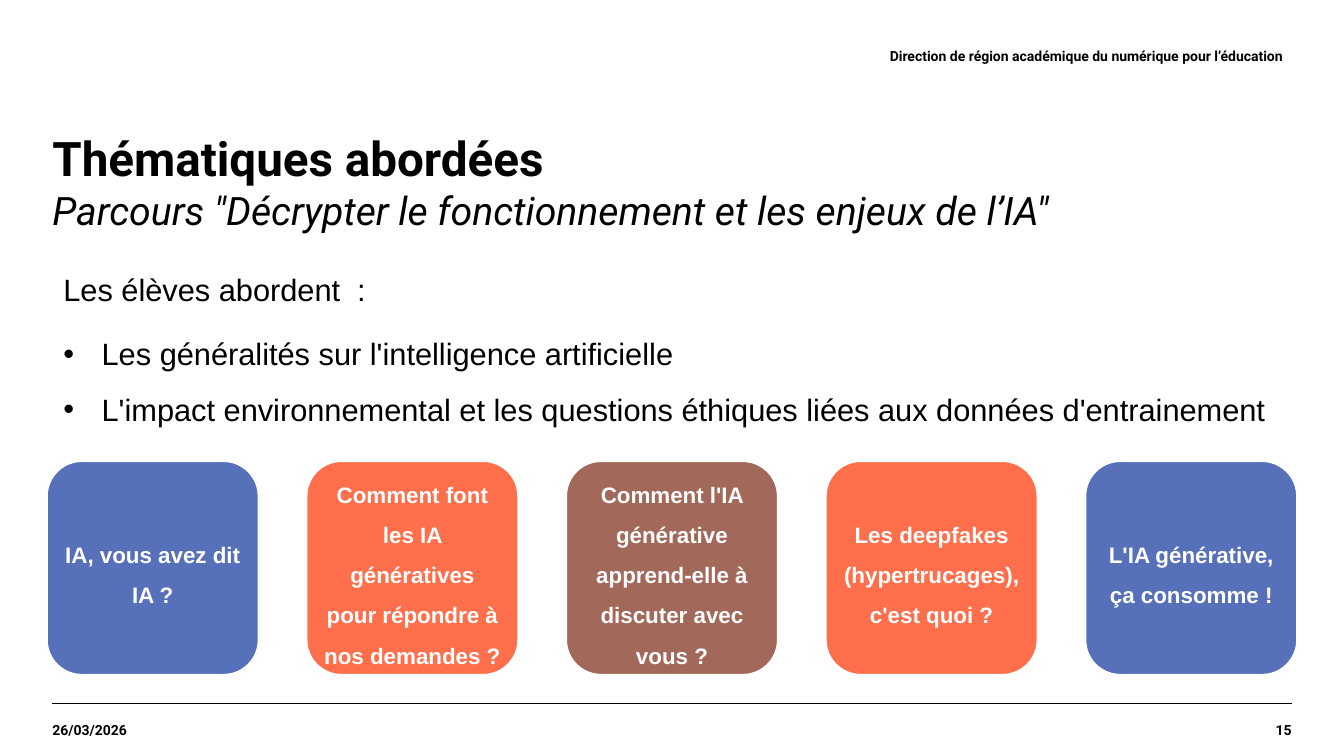
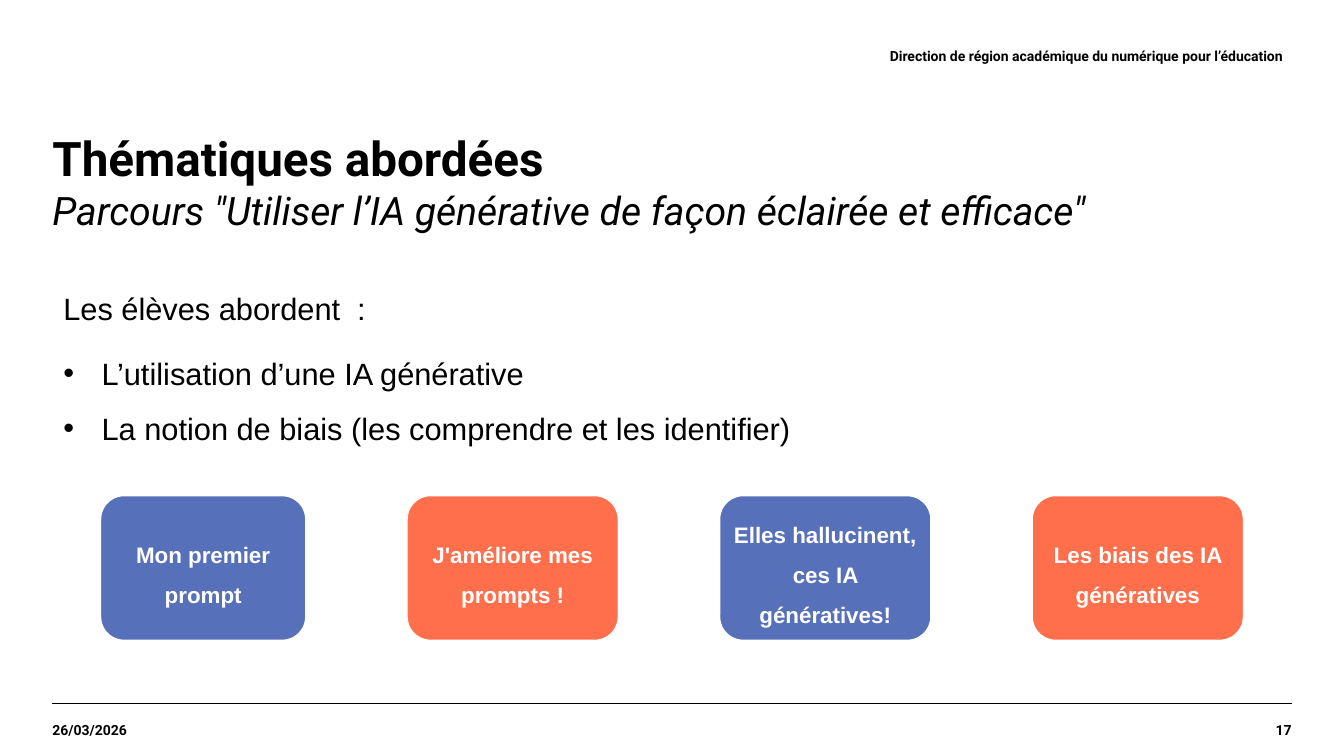
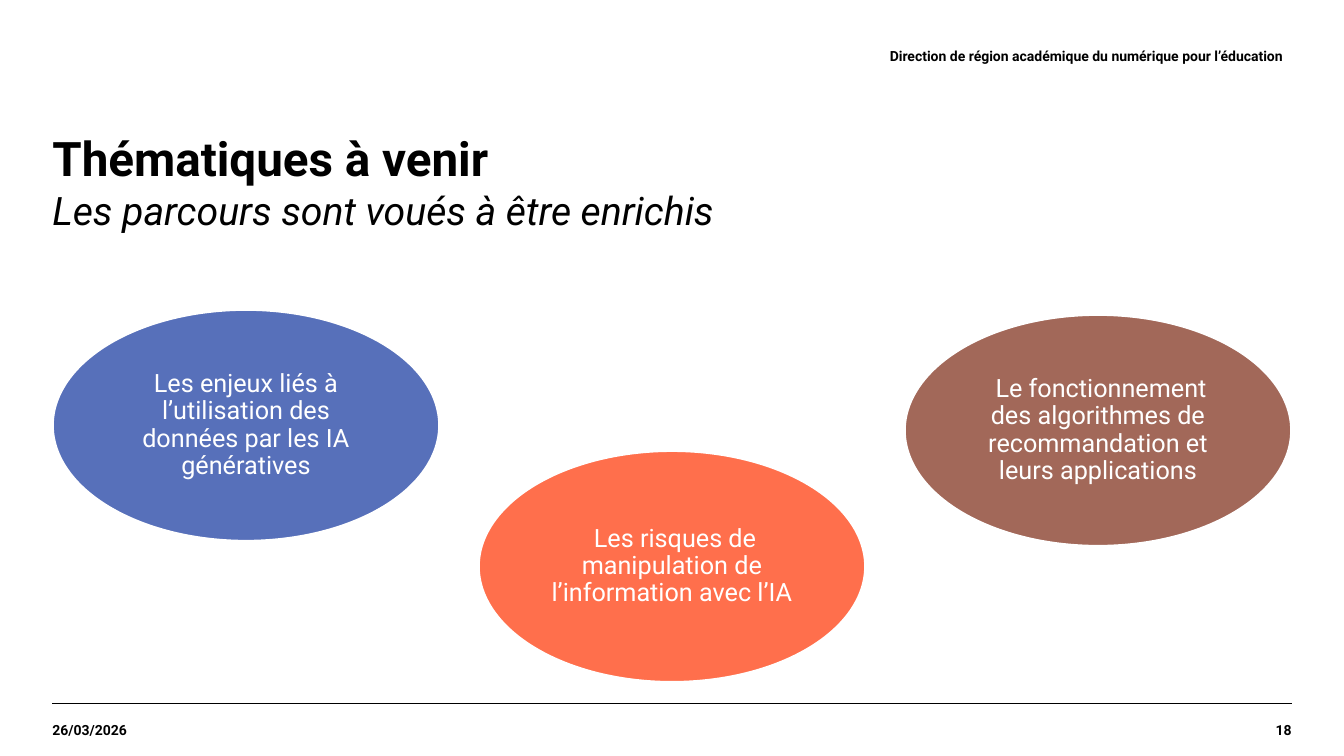
from pptx import Presentation
from pptx.dml.color import RGBColor
from pptx.enum.shapes import MSO_CONNECTOR, MSO_SHAPE
from pptx.enum.text import MSO_ANCHOR, PP_ALIGN
from pptx.oxml.ns import qn
from pptx.util import Inches, Pt
from lxml.etree import SubElement

BLACK, WHITE = "000000", "FFFFFF"
BLUE, CORAL, BROWN = "5770BA", "FF6F4C", "A26859"
HEADING_FONT, BODY_FONT = "Roboto", "Arial"
LEFT, RIGHT = 0.52, 12.81
FOOTER_TOP, FOOTER_HEIGHT = 6.98, 0.52
TILE_WIDTH = 2.11
OVAL_WIDTH, OVAL_HEIGHT = 3.84, 2.3


def color(value):
    return RGBColor.from_string(value)


def add_run(paragraph, text, size, font=HEADING_FONT, fill=BLACK, bold=False, italic=False):
    run = paragraph.add_run()
    run.text = text
    run.font.name = font
    run.font.size = Pt(size)
    run.font.bold = bold
    run.font.italic = italic
    run.font.color.rgb = color(fill)


def set_frame(frame, insets, anchor=MSO_ANCHOR.TOP):
    frame.word_wrap = True
    frame.vertical_anchor = anchor
    frame.margin_left, frame.margin_top, frame.margin_right, frame.margin_bottom = map(Inches, insets)
    return frame


def add_text_frame(slide, left, top, width, height, insets=(0, 0, 0, 0), anchor=MSO_ANCHOR.TOP):
    box = slide.shapes.add_textbox(Inches(left), Inches(top), Inches(width), Inches(height))
    return set_frame(box.text_frame, insets, anchor)


def add_small_label(frame, text, alignment):
    paragraph = frame.paragraphs[0]
    paragraph.alignment = alignment
    add_run(paragraph, text, 10, bold=True)


def add_title(slide, title, subtitle):
    paragraph = add_text_frame(slide, LEFT, 1.28, RIGHT - LEFT, 1.05).paragraphs[0]
    add_run(paragraph, title, 34, bold=True)
    paragraph.add_line_break()
    add_run(paragraph, subtitle, 28, italic=True)


def add_footer(slide, number):
    rule = slide.shapes.add_connector(
        MSO_CONNECTOR.STRAIGHT, Inches(LEFT), Inches(FOOTER_TOP), Inches(RIGHT), Inches(FOOTER_TOP)
    )
    rule.line.color.rgb = color(BLACK)
    rule.line.width = Pt(0.8)
    SubElement(rule._element.spPr, qn("a:effectLst"))
    date_frame = add_text_frame(slide, LEFT, FOOTER_TOP, 1.65, FOOTER_HEIGHT, anchor=MSO_ANCHOR.MIDDLE)
    add_small_label(date_frame, "26/03/2026", PP_ALIGN.LEFT)
    number_frame = add_text_frame(
        slide, RIGHT - 1.97, FOOTER_TOP, 1.97, FOOTER_HEIGHT, anchor=MSO_ANCHOR.MIDDLE
    )
    add_small_label(number_frame, str(number), PP_ALIGN.RIGHT)


def add_page(deck, number, title, subtitle):
    slide = deck.slides.add_slide(deck.slide_layouts[6])
    header_frame = add_text_frame(slide, 8.19, 0.42, 4.53, 0.27, (0.1, 0.05, 0, 0.05))
    add_small_label(
        header_frame, "Direction de région académique du numérique pour l’éducation", PP_ALIGN.RIGHT
    )
    add_title(slide, title, subtitle)
    add_footer(slide, number)
    return slide


def make_bullet(paragraph):
    properties = paragraph._p.get_or_add_pPr()
    properties.set("marL", str(Inches(0.38)))
    properties.set("indent", str(-Inches(0.38)))
    SubElement(properties, qn("a:buFont")).set("typeface", BODY_FONT)
    SubElement(properties, qn("a:buChar")).set("char", "•")


def add_topics(slide, top, topics):
    frame = add_text_frame(slide, 0.53, top, 12.28, 1.8, (0.1, 0.05, 0.1, 0.05))
    lead = frame.paragraphs[0]
    lead.line_spacing = 1.5
    lead.space_after = Pt(6.7)
    add_run(lead, "Les élèves abordent  :", 22, BODY_FONT)
    for topic in topics:
        item = frame.add_paragraph()
        item.line_spacing = 1.5
        make_bullet(item)
        add_run(item, topic, 22, BODY_FONT)


def add_bubble(slide, outline, left, top, width, height, fill, inset):
    bubble = slide.shapes.add_shape(outline, Inches(left), Inches(top), Inches(width), Inches(height))
    bubble.shadow.inherit = False
    bubble.fill.solid()
    bubble.fill.fore_color.rgb = color(fill)
    bubble.line.color.rgb = color(WHITE)
    bubble.line.width = Pt(2)
    paragraph = set_frame(bubble.text_frame, (inset,) * 4, MSO_ANCHOR.MIDDLE).paragraphs[0]
    paragraph.alignment = PP_ALIGN.CENTER
    return paragraph


def add_tile_row(slide, left, right, top, height, tiles, first_width=TILE_WIDTH):
    widths = [first_width] + [TILE_WIDTH] * (len(tiles) - 1)
    gap = (right - left - sum(widths)) / (len(tiles) - 1)
    for width, (question, fill) in zip(widths, tiles):
        paragraph = add_bubble(
            slide, MSO_SHAPE.ROUNDED_RECTANGLE, left, top, width, height, fill, 0.06
        )
        paragraph.line_spacing = 1.5
        add_run(paragraph, question, 16, BODY_FONT, WHITE, bold=True)
        left += width + gap


def add_oval_row(slide, ovals):
    pitch = (RIGHT - LEFT - OVAL_WIDTH) / (len(ovals) - 1)
    for index, (theme, top, fill) in enumerate(ovals):
        paragraph = add_bubble(
            slide, MSO_SHAPE.FLOWCHART_CONNECTOR, LEFT + index * pitch, top,
            OVAL_WIDTH, OVAL_HEIGHT, fill, 0.07
        )
        paragraph.line_spacing = 0.9
        add_run(paragraph, theme, 18, fill=WHITE)


def main():
    deck = Presentation()
    deck.slide_width, deck.slide_height = Inches(13.33), Inches(7.5)

    understanding = add_page(
        deck, 15, "Thématiques abordées",
        "Parcours \"Décrypter le fonctionnement et les enjeux de l’IA\""
    )
    add_tile_row(understanding, 0.46, 12.87, 4.57, 2.13, [
        ("IA, vous avez dit IA ?", BLUE),
        ("Comment font les IA génératives pour répondre à nos demandes ?", CORAL),
        ("Comment l'IA générative apprend-elle à discuter avec vous ?", BROWN),
        ("Les deepfakes (hypertrucages), c'est quoi ?", CORAL),
        ("L'IA générative, ça consomme !", BLUE),
    ])
    add_topics(understanding, 2.45, [
        "Les généralités sur l'intelligence artificielle",
        "L'impact environnemental et les questions éthiques liées aux données d'entrainement",
    ])

    using = add_page(
        deck, 17, "Thématiques abordées",
        "Parcours \"Utiliser l’IA générative de façon éclairée et efficace\""
    )
    add_tile_row(using, 0.99, 12.34, 4.91, 1.45, [
        ("Mon premier prompt", BLUE),
        ("J'améliore mes prompts !", CORAL),
        ("Elles hallucinent, ces IA génératives!", BLUE),
        ("Les biais des IA génératives", CORAL),
    ], first_width=2.05)
    add_topics(using, 2.64, [
        "L’utilisation d’une IA générative",
        "La notion de biais (les comprendre et les identifier)",
    ])

    upcoming = add_page(
        deck, 18, "Thématiques à venir", "Les parcours sont voués à être enrichis"
    )
    add_oval_row(upcoming, [
        ("Les enjeux liés à l’utilisation des données par les IA génératives", 3.07, BLUE),
        (" Les risques de manipulation de l’information avec l’IA", 4.47, CORAL),
        (" Le fonctionnement des algorithmes de recommandation et leurs applications", 3.12, BROWN),
    ])

    deck.save("out.pptx")


if __name__ == "__main__":
    main()
